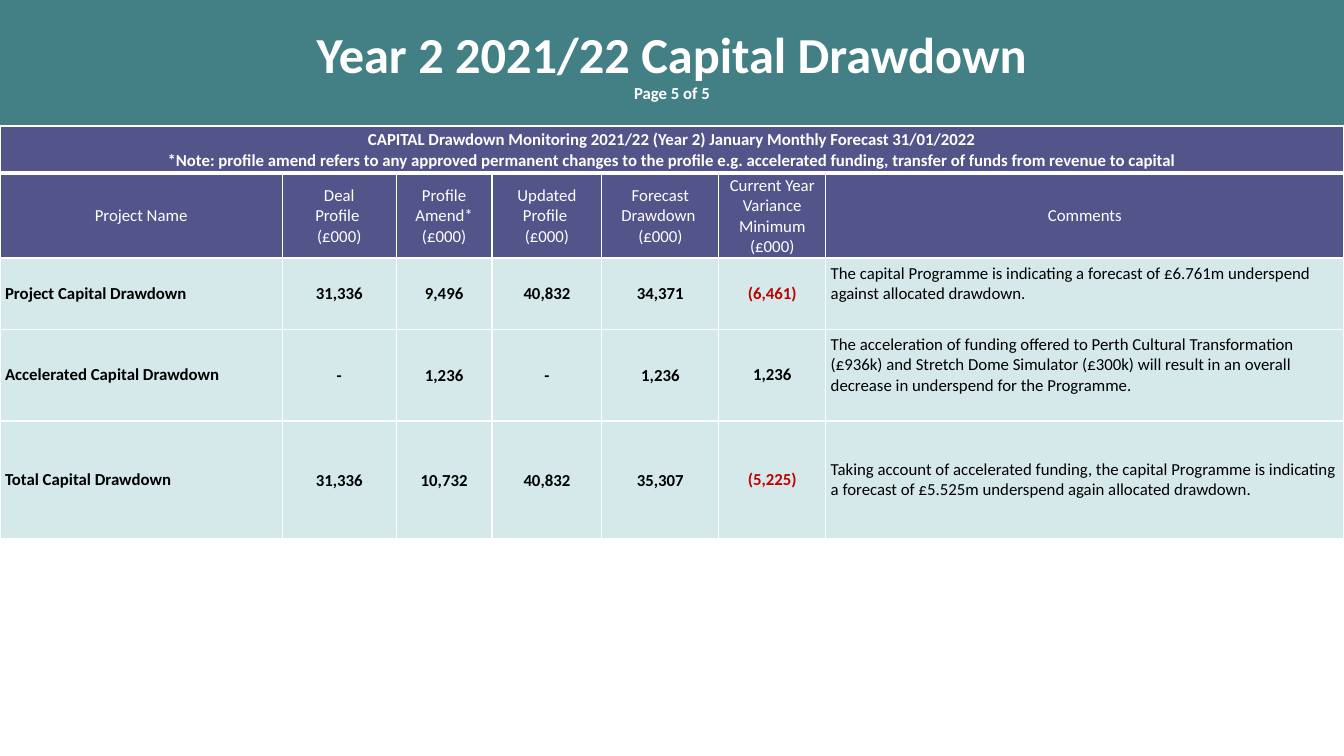
from lxml import etree
from pptx import Presentation
from pptx.dml.color import RGBColor
from pptx.enum.text import MSO_ANCHOR, MSO_AUTO_SIZE, PP_ALIGN
from pptx.oxml.ns import qn
from pptx.util import Inches, Pt

CENTER, LEFT = PP_ALIGN.CENTER, PP_ALIGN.LEFT
MIDDLE = MSO_ANCHOR.MIDDLE
NO_AUTOFIT = MSO_AUTO_SIZE.NONE
TITLE_ONLY = 5

FONT = "Calibri"
COLORS = {
    "banner": "438086",
    "header": "53548A",
    "body": "D6E9EA",
    "white": "FFFFFF",
    "black": "000000",
    "negative": "C00000",
}

TITLE_LINES = [("Year 2 2021/22 Capital Drawdown", 36), ("Page 5 of 5", 12)]
TABLE_HEADING = (
    "CAPITAL Drawdown Monitoring 2021/22 (Year 2) January Monthly Forecast 31/01/2022\n"
    "*Note: profile amend refers to any approved permanent changes to the profile "
    "e.g. accelerated funding, transfer of funds from revenue to capital"
)
COLUMN_HEADINGS = [
    "Project Name",
    "Deal\nProfile \n(£000)",
    "Profile\nAmend*\n(£000)",
    "Updated\nProfile \n(£000)",
    "Forecast\nDrawdown \n(£000)",
    "Current Year Variance Minimum\n(£000)",
    "Comments",
]
DRAWDOWNS = [
    ("Project Capital Drawdown", "31,336", "9,496", "40,832", "34,371", "(6,461)",
     "The capital Programme is indicating a forecast of £6.761m underspend "
     "against allocated drawdown."),
    ("Accelerated Capital Drawdown", "-", "1,236", "-", "1,236", "1,236",
     "The acceleration of funding offered to Perth Cultural Transformation (£936k) "
     "and Stretch Dome Simulator (£300k) will result in an overall decrease in "
     "underspend for the Programme."),
    ("Total Capital Drawdown", "31,336", "10,732", "40,832", "35,307", "(5,225)",
     "Taking account of accelerated funding, the capital Programme is indicating "
     "a forecast of £5.525m underspend again allocated drawdown."),
]
COLUMN_WIDTHS = [2.8, 1.13, 0.95, 1.09, 1.16, 1.06, 5.14]
ROW_HEIGHTS = [0.47, 0.84, 0.7, 0.9, 1.17]
COMMENT_BOTTOM_MARGINS = [0.25, 0.25, 0.05]
TIGHT_MARGINS = (0.01, 0.01, 0.01, 0)
WIDE_MARGINS = (0.05, 0.05, 0.05, 0.05)
SLIDE_WIDTH, SLIDE_HEIGHT, BANNER_HEIGHT = 13.33, 7.5, 1.25
COMMENT_COLUMN = len(COLUMN_WIDTHS) - 1
VARIANCE_COLUMN = COMMENT_COLUMN - 1


def rgb(name):
    return RGBColor.from_string(COLORS[name])


def style_font(font, size, color, bold):
    font.name = FONT
    font.size = Pt(size)
    font.bold = bold
    font.color.rgb = rgb(color)


def set_borders(cell, bottom_width):
    properties = cell._tc.get_or_add_tcPr()
    for side, width in (("L", 1), ("R", 1), ("T", 1), ("B", bottom_width)):
        line = etree.SubElement(properties, qn(f"a:ln{side}"), w=str(Pt(width)))
        fill = etree.SubElement(line, qn("a:solidFill"))
        etree.SubElement(fill, qn("a:srgbClr"), val=COLORS["white"])


def fill_cell(cell, text, fill, color, bold, alignment=CENTER,
              margins=TIGHT_MARGINS, bottom_width=1):
    set_borders(cell, bottom_width)
    cell.fill.solid()
    cell.fill.fore_color.rgb = rgb(fill)
    cell.vertical_anchor = MIDDLE
    (cell.margin_left, cell.margin_top,
     cell.margin_right, cell.margin_bottom) = map(Inches, margins)
    cell.text = text
    for paragraph in cell.text_frame.paragraphs:
        paragraph.alignment = alignment
        style_font(paragraph.font, 12, color, bold)


def add_banner(slide):
    title = slide.shapes.title
    title.left, title.top = 0, 0
    title.width, title.height = Inches(SLIDE_WIDTH), Inches(BANNER_HEIGHT)
    title.fill.solid()
    title.fill.fore_color.rgb = rgb("banner")
    frame = title.text_frame
    frame.auto_size = NO_AUTOFIT
    frame.vertical_anchor = MIDDLE
    paragraph = frame.paragraphs[0]
    paragraph.alignment = CENTER
    for index, (text, size) in enumerate(TITLE_LINES):
        if index:
            paragraph.add_line_break()
        run = paragraph.add_run()
        run.text = text
        style_font(run.font, size, "white", True)


def add_drawdown_table(slide):
    table = slide.shapes.add_table(
        len(ROW_HEIGHTS), len(COLUMN_WIDTHS), 0, Inches(BANNER_HEIGHT),
        Inches(SLIDE_WIDTH), Inches(sum(ROW_HEIGHTS))).table
    table.horz_banding = False
    for column, width in zip(table.columns, COLUMN_WIDTHS):
        column.width = Inches(width)
    for row, height in zip(table.rows, ROW_HEIGHTS):
        row.height = Inches(height)

    table.cell(0, 0).merge(table.cell(0, COMMENT_COLUMN))
    fill_cell(table.cell(0, 0), TABLE_HEADING, "header", "white", True, bottom_width=3)
    for column, heading in enumerate(COLUMN_HEADINGS):
        fill_cell(table.cell(1, column), heading, "header", "white", False)

    for row, (values, comment_bottom) in enumerate(
            zip(DRAWDOWNS, COMMENT_BOTTOM_MARGINS), start=2):
        for column, value in enumerate(values):
            is_comment = column == COMMENT_COLUMN
            is_text = is_comment or column == 0
            margins = WIDE_MARGINS if is_text or column == VARIANCE_COLUMN else TIGHT_MARGINS
            if is_comment:
                margins = (*WIDE_MARGINS[:3], comment_bottom)
            fill_cell(table.cell(row, column), value, "body",
                      "negative" if value.startswith("(") else "black",
                      not is_comment, LEFT if is_text else CENTER, margins)


def main():
    presentation = Presentation()
    presentation.slide_width = Inches(SLIDE_WIDTH)
    presentation.slide_height = Inches(SLIDE_HEIGHT)
    slide = presentation.slides.add_slide(presentation.slide_layouts[TITLE_ONLY])
    add_banner(slide)
    add_drawdown_table(slide)
    presentation.save("out.pptx")


if __name__ == "__main__":
    main()
